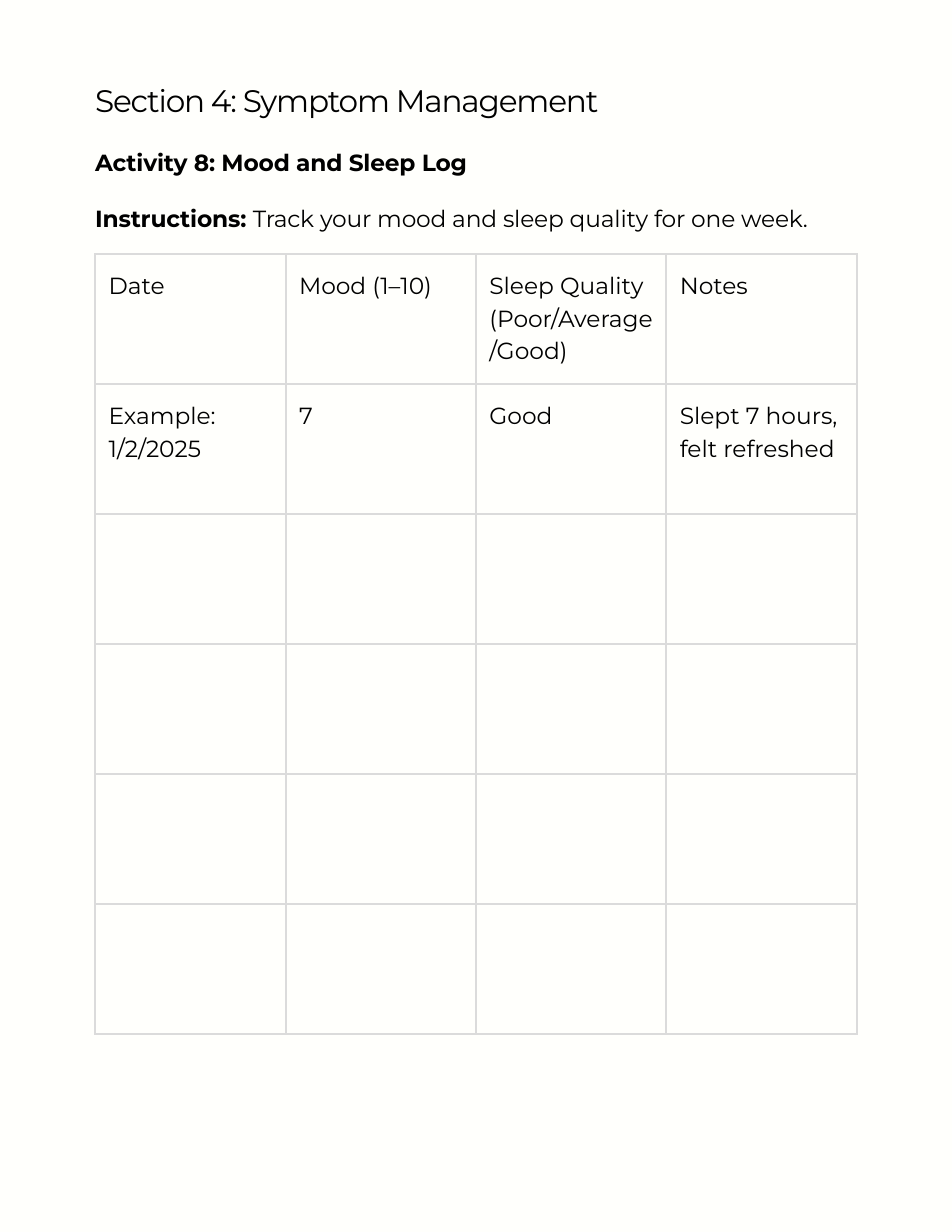
from lxml import etree
from pptx import Presentation
from pptx.dml.color import RGBColor
from pptx.enum.text import MSO_AUTO_SIZE
from pptx.oxml.ns import qn
from pptx.util import Inches, Pt

FIT_SHAPE = MSO_AUTO_SIZE.SHAPE_TO_FIT_TEXT
FONT = "Montserrat"
INK, PAPER, RULE = "000000", "FFFFFC", "DBDBDB"
LEFT, WIDTH = 0.85, 6.8
LOG_ROWS = [
    ["Date", "Mood (1–10)", "Sleep Quality (Poor/Average/Good)", "Notes"],
    ["Example: 1/2/2025", "7", "Good", "Slept 7 hours, felt refreshed"],
]
BLANK_ROWS = 4


def color(value):
    """Turn a hex string into a colour."""
    return RGBColor.from_string(value)


def write_line(paragraph, parts, size, leading, tracking=0):
    """Fill a paragraph with (text, bold) parts in the page font."""
    paragraph.line_spacing = Pt(leading)
    paragraph.font.name = FONT
    paragraph.font.size = Pt(size)
    paragraph.font.color.rgb = color(INK)
    for text, bold in parts:
        run = paragraph.add_run()
        run.text = text
        run.font.bold = bold
        if tracking:
            run._r.get_or_add_rPr().set("spc", str(round(tracking * 100)))


def add_text_frame(slide, left, top, width, height):
    """Add a wrapping text box without insets and return its frame."""
    frame = slide.shapes.add_textbox(
        Inches(left), Inches(top), Inches(width), Inches(height)).text_frame
    frame.word_wrap = True
    frame.auto_size = FIT_SHAPE
    frame.margin_left = frame.margin_right = 0
    frame.margin_top = frame.margin_bottom = 0
    return frame


def add_section_title(slide, left, top, width, height):
    """Place the section title."""
    frame = add_text_frame(slide, left, top, width, height)
    write_line(frame.paragraphs[0],
               [("Section 4: Symptom Management", False)], 20, 18, -0.8)


def add_activity_intro(slide, left, top, width, height):
    """Place the activity name and its instructions."""
    frame = add_text_frame(slide, left, top, width, height)
    write_line(frame.paragraphs[0],
               [("Activity 8: Mood and Sleep Log", True)], 15, 18, -0.1)
    instructions = frame.add_paragraph()
    instructions.space_before = Pt(18)
    write_line(instructions,
               [("Instructions: ", True),
                ("Track your mood and sleep quality for one week.", False)],
               15, 18, -0.1)


def style_cell(cell):
    """Give a log cell its insets, clear fill and four borders."""
    cell.margin_left = cell.margin_right = Inches(0.12)
    cell.margin_top = cell.margin_bottom = Inches(0.12)
    cell.fill.background()
    properties = cell._tc.get_or_add_tcPr()
    for position, side in enumerate(("a:lnL", "a:lnR", "a:lnT", "a:lnB")):
        border = etree.Element(qn(side), w=str(Pt(1.5)))
        fill = etree.SubElement(border, qn("a:solidFill"))
        etree.SubElement(fill, qn("a:srgbClr"), val=RULE)
        properties.insert(position, border)


def add_log(slide, left, top, width, height):
    """Place the mood and sleep log with its empty rows."""
    columns = len(LOG_ROWS[0])
    rows = LOG_ROWS + [[""] * columns] * BLANK_ROWS
    log = slide.shapes.add_table(
        len(rows), columns, Inches(left), Inches(top),
        Inches(width), Inches(height)).table
    log.first_row = log.horz_banding = False
    for row, entries in enumerate(rows):
        for column, entry in enumerate(entries):
            cell = log.cell(row, column)
            style_cell(cell)
            if entry:
                write_line(cell.text_frame.paragraphs[0],
                           [(entry, False)], 15, 21)


def main():
    """Build the log page."""
    deck = Presentation()
    deck.slide_width, deck.slide_height = Inches(8.5), Inches(11)
    slide = deck.slides.add_slide(deck.slide_layouts[6])
    slide.background.fill.solid()
    slide.background.fill.fore_color.rgb = color(PAPER)
    add_section_title(slide, LEFT, 0.81, WIDTH, 0.27)
    add_activity_intro(slide, LEFT, 1.32, WIDTH, 0.7)
    add_log(slide, LEFT, 2.27, WIDTH, 6.96)
    deck.save("out.pptx")


if __name__ == "__main__":
    main()
